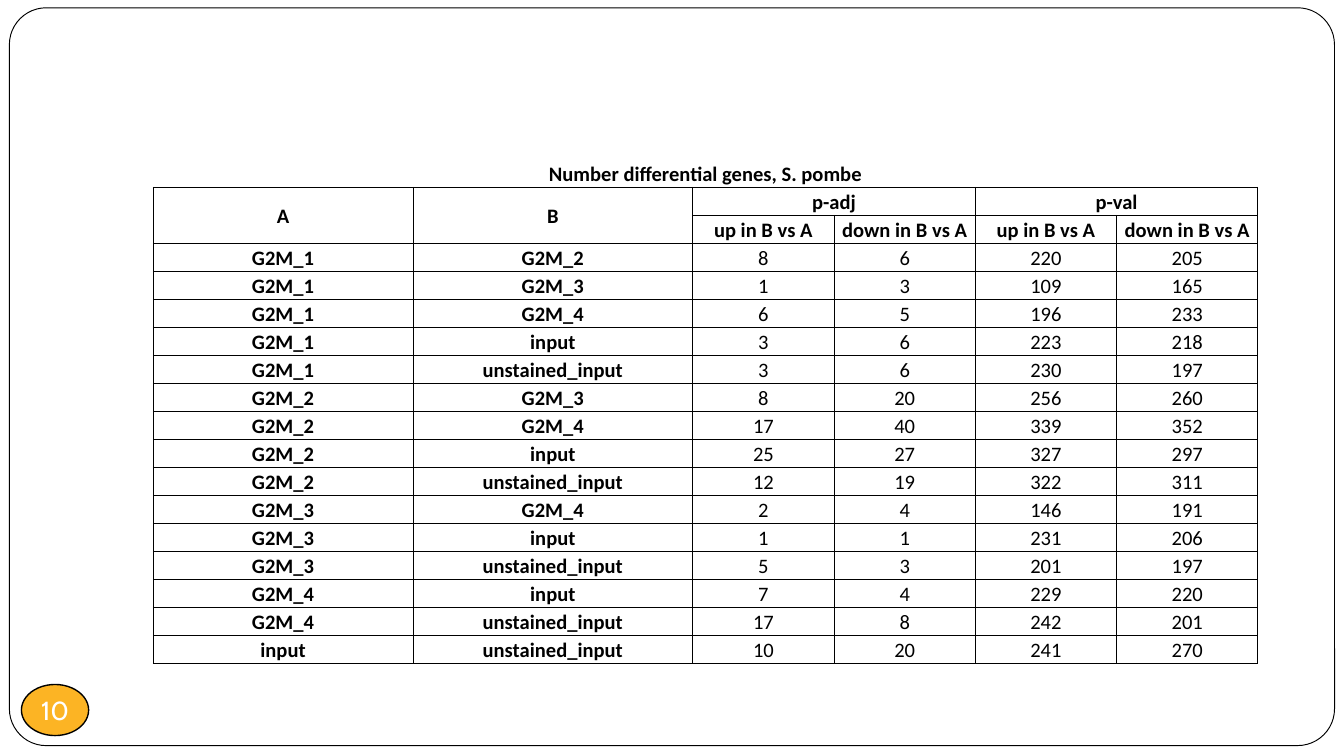
from dataclasses import dataclass
from itertools import combinations

from lxml.etree import SubElement
from pptx import Presentation
from pptx.dml.color import RGBColor
from pptx.enum.shapes import MSO_SHAPE
from pptx.enum.text import MSO_ANCHOR, PP_ALIGN
from pptx.oxml.ns import qn
from pptx.util import Emu, Inches, Pt

BLACK = RGBColor(0x00, 0x00, 0x00)
WHITE = RGBColor(0xFF, 0xFF, 0xFF)
AMBER = RGBColor(0xFC, 0xB4, 0x24)

WIDTH = Inches(10)
HEIGHT = Emu(WIDTH * 9 // 16)
PLAIN_STYLE = "{2D5ABB26-0587-4C30-8999-92F81FD0307C}"
COL_WEIGHTS = (1.93, 2.08, 1.05, 1.05, 1.05, 1.05)

SAMPLES = ("G2M_1", "G2M_2", "G2M_3", "G2M_4", "input", "unstained_input")
# p-adj up, p-adj down, p-val up, p-val down for each pair of samples
GENE_COUNTS = (
    (8, 6, 220, 205),
    (1, 3, 109, 165),
    (6, 5, 196, 233),
    (3, 6, 223, 218),
    (3, 6, 230, 197),
    (8, 20, 256, 260),
    (17, 40, 339, 352),
    (25, 27, 327, 297),
    (12, 19, 322, 311),
    (2, 4, 146, 191),
    (1, 1, 231, 206),
    (5, 3, 201, 197),
    (7, 4, 229, 220),
    (17, 8, 242, 201),
    (10, 20, 241, 270),
)


@dataclass(frozen=True)
class Box:
    """A rectangle in per cent of the slide's width and height."""
    left: float
    top: float
    width: float
    height: float

    def emu(self) -> tuple[Emu, ...]:
        return (Emu(round(WIDTH * self.left / 100)), Emu(round(HEIGHT * self.top / 100)),
                Emu(round(WIDTH * self.width / 100)), Emu(round(HEIGHT * self.height / 100)))


@dataclass(frozen=True)
class Heading:
    text: str
    row: int
    col: int
    rows: int = 1
    cols: int = 1


FRAME = Box(0.7, 1.03, 98.6, 97.6)
BADGE = Box(1.6, 90.55, 5, 6.76)
TABLE = Box(11.4, 21.08, 82.2, 66.7)

UP, DOWN = "up in B vs A", "down in B vs A"
HEADINGS = (
    Heading("Number differential genes, S. pombe", 0, 0, cols=6),
    Heading("A", 1, 0, rows=2),
    Heading("B", 1, 1, rows=2),
    Heading("p-adj", 1, 2, cols=2),
    Heading("p-val", 1, 4, cols=2),
    Heading(UP, 2, 2),
    Heading(DOWN, 2, 3),
    Heading(UP, 2, 4),
    Heading(DOWN, 2, 5),
)
HEADER_ROWS = 3


def add_panel(slide, kind, box: Box, fill: RGBColor, line_width: float):
    sp = slide.shapes.add_shape(kind, *box.emu())
    sp.shadow.inherit = False
    sp.fill.solid()
    sp.fill.fore_color.rgb = fill
    sp.line.color.rgb = BLACK
    sp.line.width = Pt(line_width)
    return sp


def add_run(p, text: str, font: str, size: float, color: RGBColor, bold: bool = False) -> None:
    p.alignment = PP_ALIGN.CENTER
    r = p.add_run()
    r.text = text
    r.font.name = font
    r.font.size = Pt(size)
    r.font.bold = bold
    r.font.color.rgb = color


def add_badge(slide, number: str) -> None:
    sp = add_panel(slide, MSO_SHAPE.OVAL, BADGE, AMBER, 0.75)
    tf = sp.text_frame
    tf.word_wrap = False
    tf.vertical_anchor = MSO_ANCHOR.MIDDLE
    tf.margin_left = tf.margin_top = tf.margin_right = tf.margin_bottom = 0
    add_run(tf.paragraphs[0], number, "Cabin", 14, WHITE)


def style_cell(cell, sides: str) -> None:
    """Set margins, borders on the given sides (of LRTB) and no fill."""
    cell.margin_left = cell.margin_top = cell.margin_right = Inches(0.01)
    cell.margin_bottom = 0
    cell.vertical_anchor = MSO_ANCHOR.BOTTOM
    tc_pr = cell._tc.get_or_add_tcPr()
    for side in sides:
        ln = SubElement(tc_pr, qn(f"a:ln{side}"), w=str(Pt(0.5)))
        SubElement(SubElement(ln, qn("a:solidFill")), qn("a:srgbClr"), val=str(BLACK))
    cell.fill.background()


def set_text(cell, text: str, bold: bool) -> None:
    add_run(cell.text_frame.paragraphs[0], text, "Calibri", 11, BLACK, bold)


def add_gene_table(slide) -> None:
    n_rows, n_cols = HEADER_ROWS + len(GENE_COUNTS), len(COL_WEIGHTS)
    left, top, width, height = TABLE.emu()
    table = slide.shapes.add_table(n_rows, n_cols, left, top, width, height).table
    table.first_row = table.horz_banding = False
    table._tbl.tblPr.find(qn("a:tableStyleId")).text = PLAIN_STYLE
    for column, weight in zip(table.columns, COL_WEIGHTS):
        column.width = Emu(round(width * weight / sum(COL_WEIGHTS)))
    for i, row in enumerate(table.rows):
        row.height = Emu(height // n_rows)
        for cell in row.cells:
            style_cell(cell, "LRTB" if i else "B")

    for h in HEADINGS:
        cell = table.cell(h.row, h.col)
        if h.rows * h.cols > 1:
            cell.merge(table.cell(h.row + h.rows - 1, h.col + h.cols - 1))
        if h.rows > 1:
            cell.vertical_anchor = MSO_ANCHOR.MIDDLE
        set_text(cell, h.text, bold=True)

    for i, (pair, counts) in enumerate(zip(combinations(SAMPLES, 2), GENE_COUNTS), HEADER_ROWS):
        for j, value in enumerate((*pair, *counts)):
            set_text(table.cell(i, j), str(value), bold=j < len(pair))

    # Cells covered by a merge keep the small type, so they do not stretch their row.
    for cell in table.iter_cells():
        if cell.is_spanned:
            SubElement(cell.text_frame.paragraphs[0]._p, qn("a:endParaRPr"), sz="1100")


def main() -> None:
    prs = Presentation()
    prs.slide_width, prs.slide_height = WIDTH, HEIGHT
    slide = prs.slides.add_slide(prs.slide_layouts[6])
    frame = add_panel(slide, MSO_SHAPE.ROUNDED_RECTANGLE, FRAME, WHITE, 0.5)
    frame.adjustments[0] = 0.05
    add_badge(slide, "10")
    add_gene_table(slide)
    prs.save("out.pptx")


if __name__ == "__main__":
    main()
